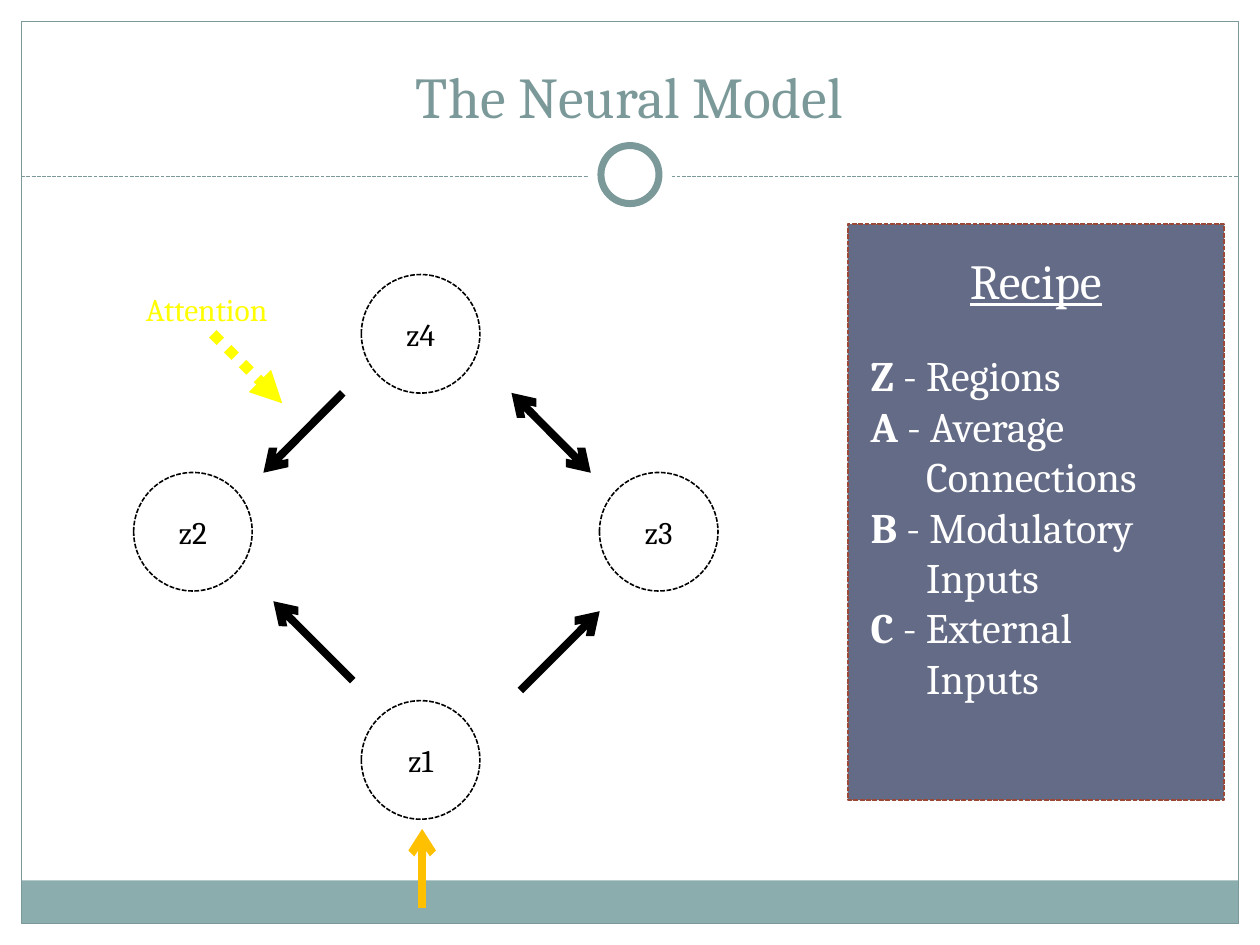
from pptx import Presentation
from pptx.dml.color import RGBColor
from pptx.enum.dml import MSO_LINE
from pptx.enum.shapes import MSO_CONNECTOR, MSO_SHAPE
from pptx.enum.text import MSO_ANCHOR, PP_ALIGN
from pptx.oxml.ns import qn
from pptx.util import Cm, Pt
from lxml import etree

RECT, OVAL = MSO_SHAPE.RECTANGLE, MSO_SHAPE.OVAL
STRAIGHT = MSO_CONNECTOR.STRAIGHT
DASH, DOT = MSO_LINE.SQUARE_DOT, MSO_LINE.ROUND_DOT
LEFT, CENTER = PP_ALIGN.LEFT, PP_ALIGN.CENTER
TOP, MIDDLE, BOTTOM = MSO_ANCHOR.TOP, MSO_ANCHOR.MIDDLE, MSO_ANCHOR.BOTTOM

THEME = {
    "font": "Cambria",
    "white": "FFFFFF", "black": "000000", "teal": "7C999A", "footer": "8CADAE",
    "panel": "646B86", "rust": "9B4936", "yellow": "FFFF00", "orange": "FFC000",
    "title": 33, "heading": 28, "body": 24, "label": 18,
}

TITLE = "The Neural Model"
HEADING = "Recipe"
RECIPE = [
    ("Z", ["Regions"]),
    ("A", ["Average", "Connections"]),
    ("B", ["Modulatory", "Inputs"]),
    ("C", ["External", "Inputs"]),
]
NODES = {"z4": (8.48, 6.73), "z2": (3.89, 10.72), "z3": (13.28, 10.72), "z1": (8.48, 15.32)}
NODE_SIZE = 2.39
ARROWS = [
    ((6.91, 7.92), (5.31, 9.53), "black", 4.5, None, None, "arrow"),
    ((11.91, 9.53), (10.31, 7.92), "black", 4.5, None, "arrow", "arrow"),
    ((10.49, 13.92), (12.09, 12.32), "black", 4.5, None, None, "arrow"),
    ((7.11, 13.72), (5.51, 12.12), "black", 4.5, None, None, "arrow"),
    ((4.29, 6.73), (5.69, 8.13), "yellow", 6, DOT, None, "triangle"),
    ((8.51, 18.31), (8.51, 16.71), "orange", 4.5, None, None, "arrow"),
]
WIDTH, HEIGHT, MARGIN = 25.4, 19.05, 0.43
INNER = WIDTH - 2 * MARGIN
DIVIDER_Y, RING_Y = 3.56, 3.52
HANGING = 1.12


def color(name):
    return RGBColor.from_string(THEME[name])


def set_line(line, name, width, dash=None):
    line.color.rgb = color(name)
    line.width = Pt(width)
    if dash is not None:
        line.dash_style = dash


def add_shape(s, kind, box, fill=None, line=None):
    sp = s.shapes.add_shape(kind, *map(Cm, box))
    sp.shadow.inherit = False
    if fill:
        sp.fill.solid()
        sp.fill.fore_color.rgb = color(fill)
    else:
        sp.fill.background()
    if line:
        set_line(sp.line, *line)
    else:
        sp.line.fill.background()
    return sp


def add_circle(s, center, size, fill, line=None):
    x, y = center
    return add_shape(s, OVAL, (x - size / 2, y - size / 2, size, size), fill, line)


def add_line(s, start, end, name, width, dash=None, head=None, tail=None):
    cx = s.shapes.add_connector(STRAIGHT, *map(Cm, start + end))
    set_line(cx.line, name, width, dash)
    ln = cx.line._get_or_add_ln()
    for tag, kind in (("a:headEnd", head), ("a:tailEnd", tail)):
        if kind:
            etree.SubElement(ln, qn(tag), type=kind)
    etree.SubElement(cx._element.spPr, qn("a:effectLst"))


def add_run(p, text, name, size, **extra):
    r = p.add_run()
    r.text = text
    r.font.color.rgb = color(name)
    values = {"name": THEME["font"], "size": Pt(THEME[size]), **extra}
    for key, value in values.items():
        setattr(r.font, key, value)


def set_frame(sp, anchor, wrap=True):
    tf = sp.text_frame
    for key, value in {"vertical_anchor": anchor, "word_wrap": wrap}.items():
        setattr(tf, key, value)
    return tf


def add_text(s, box, text, name, size, align=LEFT, anchor=TOP, wrap=False, **extra):
    tf = set_frame(s.shapes.add_textbox(*map(Cm, box)), anchor, wrap)
    p = tf.paragraphs[0]
    p.alignment = align
    add_run(p, text, name, size, **extra)


def add_background(s):
    for box in ((0, 0, WIDTH, 3.86), (0, 0, MARGIN, HEIGHT),
                (WIDTH - MARGIN, 0, MARGIN, HEIGHT)):
        add_shape(s, RECT, box, "white")
    add_shape(s, RECT, (MARGIN, 17.75, INNER, 0.86), "footer")
    add_shape(s, RECT, (MARGIN, MARGIN, INNER, 18.19), line=("teal", 0.75))
    add_line(s, (MARGIN, DIVIDER_Y), (WIDTH - MARGIN, DIVIDER_Y), "teal", 0.75, DASH)
    ring = (WIDTH / 2, RING_Y)
    add_circle(s, ring, 1.7, "white")
    add_circle(s, ring, 1.17, "white", ("teal", 4))


def add_recipe(s):
    add_shape(s, RECT, (17.09, 4.52, 7.59, 11.61), "panel", ("rust", 0.9, DASH))
    add_text(s, (19.3, 4.93, 3.2, 1.45), HEADING, "white", "heading", underline=True)
    tf = set_frame(s.shapes.add_textbox(*map(Cm, (17.3, 6.93, 7.19, 7.62))), TOP)
    lines = [(key if i == 0 else None, text)
             for key, texts in RECIPE for i, text in enumerate(texts)]
    for i, (key, text) in enumerate(lines):
        p = tf.add_paragraph() if i else tf.paragraphs[0]
        if key:
            add_run(p, key, "white", "body", bold=True)
            add_run(p, f" - {text}", "white", "body")
        else:
            p._p.get_or_add_pPr().set("marL", str(Cm(HANGING)))
            add_run(p, text, "white", "body")


def add_network(s):
    for label, center in NODES.items():
        sp = add_circle(s, center, NODE_SIZE, "white", ("black", 0.9, DASH))
        p = set_frame(sp, MIDDLE).paragraphs[0]
        p.alignment = CENTER
        add_run(p, label, "black", "label")
    for arrow in ARROWS:
        add_line(s, *arrow)
    add_text(s, (2.69, 5.72, 2.97, 1.02), "Attention", "yellow", "label")


def main():
    prs = Presentation()
    prs.slide_width, prs.slide_height = Cm(WIDTH), Cm(HEIGHT)
    s = prs.slides.add_slide(prs.slide_layouts[6])
    add_background(s)
    add_text(s, (0.84, 0.64, 23.7, 2.11), TITLE, "teal", "title", CENTER, BOTTOM, True)
    add_recipe(s)
    add_network(s)
    prs.save("out.pptx")


if __name__ == "__main__":
    main()
